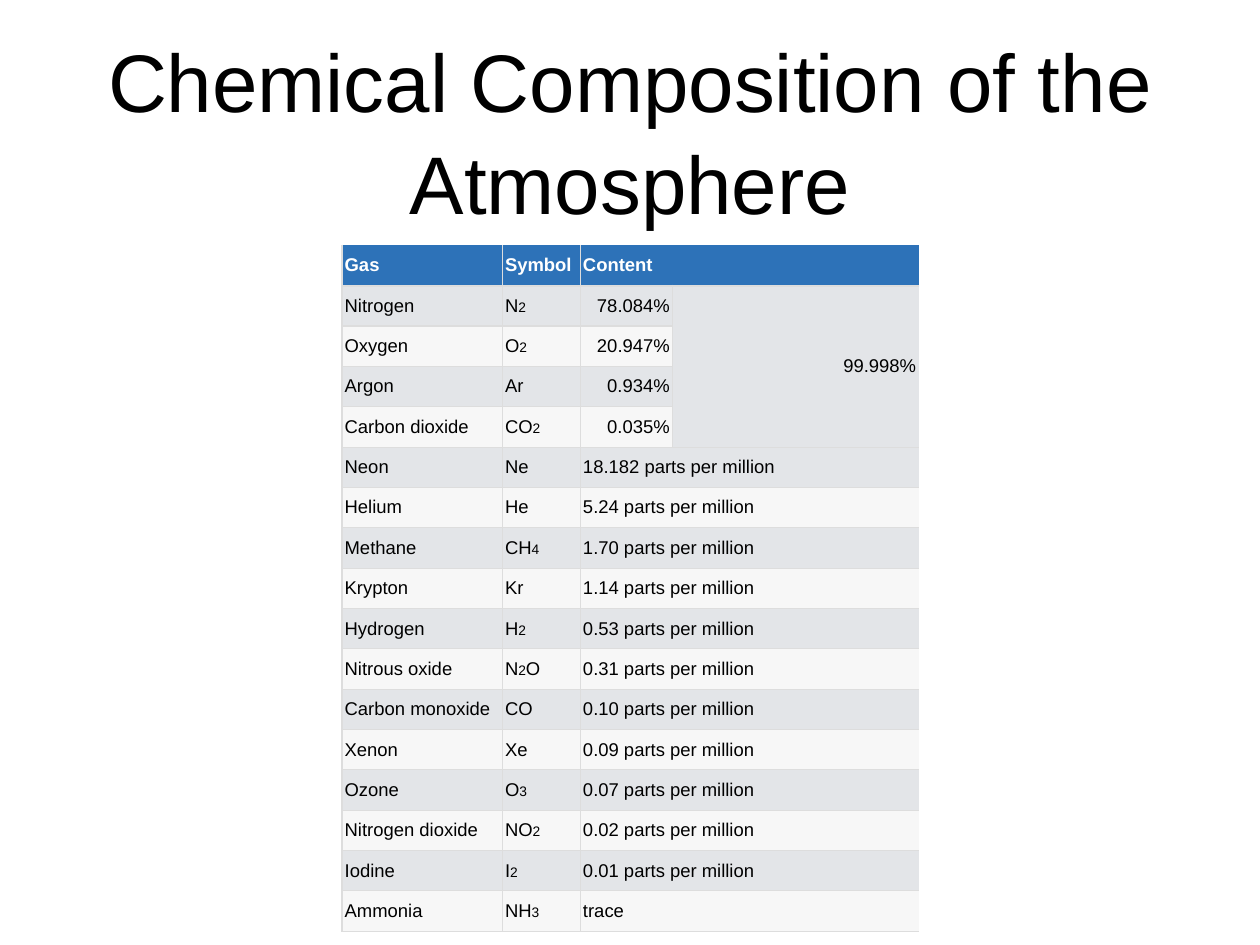
from itertools import groupby

from lxml import etree
from pptx import Presentation
from pptx.dml.color import RGBColor
from pptx.enum.text import MSO_ANCHOR, PP_ALIGN
from pptx.oxml.ns import qn
from pptx.util import Inches, Pt

LEFT, CENTER, RIGHT = PP_ALIGN.LEFT, PP_ALIGN.CENTER, PP_ALIGN.RIGHT
MIDDLE = MSO_ANCHOR.MIDDLE

TITLE = "Chemical Composition of the Atmosphere"
HEADER = ("Gas", "Symbol", "Content")
MAIN_GASES = [
    ("Nitrogen", "N2", "78.084%"),
    ("Oxygen", "O2", "20.947%"),
    ("Argon", "Ar", "0.934%"),
    ("Carbon dioxide", "CO2", "0.035%"),
]
MAIN_TOTAL = "99.998%"
TRACE_GASES = [
    ("Neon", "Ne", "18.182 parts per million"),
    ("Helium", "He", "5.24 parts per million"),
    ("Methane", "CH4", "1.70 parts per million"),
    ("Krypton", "Kr", "1.14 parts per million"),
    ("Hydrogen", "H2", "0.53 parts per million"),
    ("Nitrous oxide", "N2O", "0.31 parts per million"),
    ("Carbon monoxide", "CO", "0.10 parts per million"),
    ("Xenon", "Xe", "0.09 parts per million"),
    ("Ozone", "O3", "0.07 parts per million"),
    ("Nitrogen dioxide", "NO2", "0.02 parts per million"),
    ("Iodine", "I2", "0.01 parts per million"),
    ("Ammonia", "NH3", "trace"),
]
ROWS = [HEADER, *MAIN_GASES, *TRACE_GASES]

SLIDE_W, SLIDE_H = 14.22, 10.67
TITLE_BOX = (1.04, 0.28, 12.14, 2.36)
TABLE_LEFT, TABLE_TOP, TABLE_H = 3.86, 2.77, 7.75
COLUMN_WIDTHS = (1.81, 0.88, 1.04, 1.39, 1.39)
CONTENT, TOTAL, LAST = 2, 3, 4
HEADER_FILL, BANDS, BORDER = "2D72B8", ("F7F7F7", "E3E5E8"), "DDDDDD"
BODY_SIZE, SUBSCRIPT_SIZE = 15, 11.2
NO_STYLE = "{2D5ABB26-0587-4C30-8999-92F81FD0307C}"
MARGINS = ("margin_left", "margin_top", "margin_right", "margin_bottom")


def color(hex_code):
    return RGBColor.from_string(hex_code)


def set_all(target, values):
    for name, value in values.items():
        setattr(target, name, value)


def add_run(paragraph, text, size, hex_code, bold=False):
    run = paragraph.add_run()
    run.text = text
    set_all(run.font, {"name": "Arial", "size": Pt(size), "bold": bold})
    run.font.color.rgb = color(hex_code)


def add_border(cell, side, points):
    line = etree.SubElement(cell._tc.get_or_add_tcPr(), qn(f"a:ln{side}"), w=str(Pt(points)))
    fill = etree.SubElement(line, qn("a:solidFill"))
    etree.SubElement(fill, qn("a:srgbClr"), val=BORDER)


def write_cell(cell, text, align, is_header, is_symbol):
    """Fill in the text, setting the digits of a chemical symbol smaller."""
    set_all(cell, {"vertical_anchor": MIDDLE, **dict.fromkeys(MARGINS, Inches(0.03))})
    paragraph = cell.text_frame.paragraphs[0]
    paragraph.alignment = align
    for is_digit, letters in groupby(text, lambda letter: is_symbol and letter.isdigit()):
        size = SUBSCRIPT_SIZE if is_digit else BODY_SIZE
        add_run(paragraph, "".join(letters), size, "FFFFFF" if is_header else "000000", is_header)


def style_cell(cell, row, column):
    add_border(cell, "L", 1)
    if column + cell.span_width <= LAST:
        add_border(cell, "R", 1)
    if row > 0:
        add_border(cell, "T", 2 if row == 1 and column < TOTAL else 1)
    add_border(cell, "B", 2 if row == 0 else 1)
    cell.fill.solid()
    cell.fill.fore_color.rgb = color(BANDS[row % 2] if row else HEADER_FILL)


def add_title(slide):
    frame = slide.shapes.add_textbox(*map(Inches, TITLE_BOX)).text_frame
    set_all(frame, {"word_wrap": True, "vertical_anchor": MIDDLE,
                    **dict.fromkeys(MARGINS, Inches(0.06))})
    set_all(frame.paragraphs[0], {"alignment": CENTER, "line_spacing": 1.04})
    add_run(frame.paragraphs[0], TITLE, 66.4, "000000")


def add_gas_table(slide):
    frame = slide.shapes.add_table(
        len(ROWS), len(COLUMN_WIDTHS), Inches(TABLE_LEFT), Inches(TABLE_TOP),
        Inches(sum(COLUMN_WIDTHS)), Inches(TABLE_H))
    table = frame.table
    table._tbl.tblPr.find(qn("a:tableStyleId")).text = NO_STYLE
    for column, width in zip(table.columns, COLUMN_WIDTHS):
        column.width = Inches(width)
    for row in table.rows:
        row.height = Inches(TABLE_H / len(ROWS))

    main_rows = range(1, len(MAIN_GASES) + 1)
    total_cell = table.cell(main_rows[0], TOTAL)
    total_cell.merge(table.cell(main_rows[-1], LAST))
    write_cell(total_cell, MAIN_TOTAL, RIGHT, False, False)

    for r, texts in enumerate(ROWS):
        if r not in main_rows:
            table.cell(r, CONTENT).merge(table.cell(r, LAST))
        for c, text in enumerate(texts):
            align = RIGHT if r in main_rows and c == CONTENT else LEFT
            write_cell(table.cell(r, c), text, align, r == 0, c == 1)
        for c in range(len(COLUMN_WIDTHS)):
            if not table.cell(r, c).is_spanned:
                style_cell(table.cell(r, c), r, c)


def main():
    deck = Presentation()
    set_all(deck, {"slide_width": Inches(SLIDE_W), "slide_height": Inches(SLIDE_H)})
    slide = deck.slides.add_slide(deck.slide_layouts[6])
    add_title(slide)
    add_gas_table(slide)
    deck.save("out.pptx")


if __name__ == "__main__":
    main()
